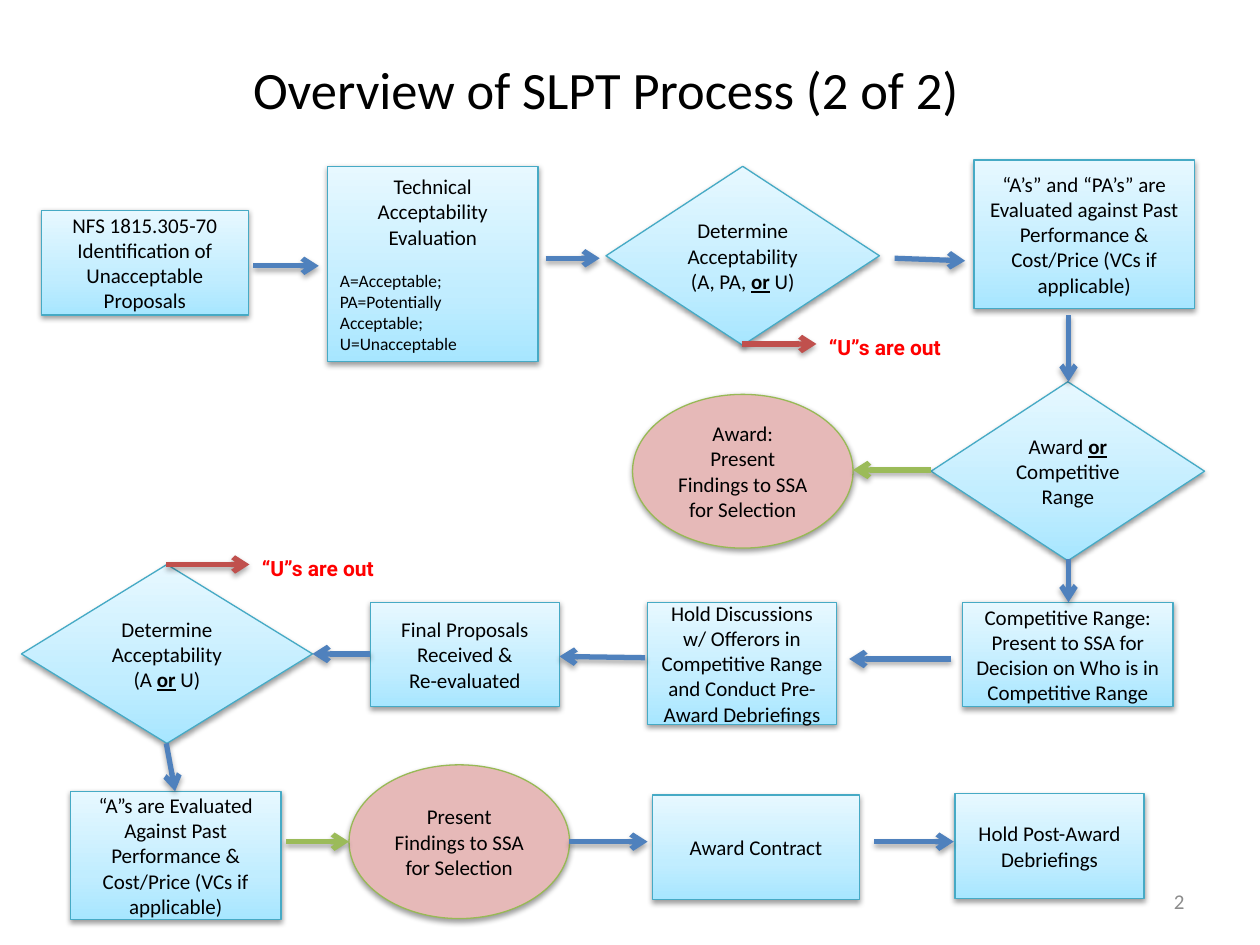
from lxml import etree
from pptx import Presentation
from pptx.dml.color import RGBColor
from pptx.enum.shapes import MSO_CONNECTOR, MSO_SHAPE
from pptx.enum.text import MSO_ANCHOR, PP_ALIGN
from pptx.oxml.ns import qn
from pptx.util import Inches, Pt

COLORS = {
    "text": "000000", "number": "8C8C8C", "out": "FF0000",
    "step_line": "46AAC5", "award": "E6B9B8", "award_line": "98B955",
    "next": "4F81BD", "reject": "C0504D", "select": "9BBB59",
}
STEP_STOPS = [(0, "A7E6FF"), (35, "C1EDFF"), (100, "E7F8FF")]


def rgb(name):
    return RGBColor.from_string(COLORS[name])


def write(p, text, size=12, font="Calibri", color="text", bold=False,
          align=PP_ALIGN.CENTER, before=0):
    p.alignment = align
    p.space_before = Pt(before)
    for i, part in enumerate(text.split("*")):
        r = p.add_run()
        r.text = part
        r.font.size = Pt(size)
        r.font.name = font
        r.font.color.rgb = rgb(color)
        r.font.bold = bold or i % 2 == 1
        r.font.underline = i % 2 == 1


class FlowSlide:
    def __init__(self, prs):
        self.slide = prs.slides.add_slide(prs.slide_layouts[5])
        self.shapes = self.slide.shapes

    def shadow(self, sp, dist, alpha):
        effects = etree.SubElement(sp._element.spPr, qn("a:effectLst"))
        outer = etree.SubElement(effects, qn("a:outerShdw"), blurRad="40000",
                                 dist=str(dist), dir="5400000", rotWithShape="0")
        clr = etree.SubElement(outer, qn("a:srgbClr"), val=COLORS["text"])
        etree.SubElement(clr, qn("a:alpha"), val=str(alpha * 1000))

    def title(self, text):
        sp = self.shapes.title
        sp.left, sp.top = Inches(0.14), Inches(0.33)
        sp.width, sp.height = Inches(9.34), Inches(0.75)
        sp.text_frame.vertical_anchor = MSO_ANCHOR.MIDDLE
        write(sp.text_frame.paragraphs[0], text, size=30)

    def node(self, kind, box, paras, line="step_line"):
        sp = self.shapes.add_shape(kind, *map(Inches, box))
        sp.line.color.rgb = rgb(line)
        sp.line.width = Pt(0.75)
        self.shadow(sp, 20000, 38)
        tf = sp.text_frame
        tf.word_wrap = True
        tf.vertical_anchor = MSO_ANCHOR.MIDDLE
        for i, text in enumerate(paras):
            p = tf.add_paragraph() if i else tf.paragraphs[0]
            write(p, text)
        return sp

    def step(self, box, *paras, kind=MSO_SHAPE.FLOWCHART_PROCESS):
        sp = self.node(kind, box, paras)
        sp.fill.gradient()
        sp.fill.gradient_angle = 90
        stops = sp._element.spPr.find(qn("a:gradFill")).find(qn("a:gsLst"))
        for gs in list(stops):
            stops.remove(gs)
        for pos, color in STEP_STOPS:
            gs = etree.SubElement(stops, qn("a:gs"), pos=str(pos * 1000))
            etree.SubElement(gs, qn("a:srgbClr"), val=color)
        return sp

    def decision(self, box, *paras):
        return self.step(box, *paras, kind=MSO_SHAPE.FLOWCHART_DECISION)

    def award(self, left, top, *paras):
        sp = self.node(MSO_SHAPE.OVAL, (left, top, 1.75, 1.22), paras, "award_line")
        sp.fill.solid()
        sp.fill.fore_color.rgb = rgb("award")

    def arrow(self, x1, y1, x2, y2, color="next"):
        cn = self.shapes.add_connector(MSO_CONNECTOR.STRAIGHT,
                                       *map(Inches, (x1, y1, x2, y2)))
        cn.line.color.rgb = rgb(color)
        cn.line.width = Pt(3)
        etree.SubElement(cn.line._get_or_add_ln(), qn("a:tailEnd"), type="arrow")
        self.shadow(cn, 23000, 35)

    def label(self, box, text, anchor=MSO_ANCHOR.TOP, **fmt):
        tf = self.shapes.add_textbox(*map(Inches, box)).text_frame
        tf.word_wrap = True
        tf.vertical_anchor = anchor
        write(tf.paragraphs[0], text, **fmt)

    def out_label(self, left, top):
        self.label((left, top, 1.25, 0.3), "“U”s are out", font="Roboto",
                   color="out", bold=True, align=PP_ALIGN.LEFT)


def main():
    prs = Presentation()
    prs.slide_width, prs.slide_height = Inches(10), Inches(7.5)
    s = FlowSlide(prs)
    s.title("Overview of SLPT Process (2 of 2)")

    s.step((0.33, 1.67, 1.64, 0.83), "NFS 1815.305-70",
           "Identification of Unacceptable Proposals")
    evaluation = s.step((2.6, 1.32, 1.67, 1.55), "Technical Acceptability Evaluation")
    write(evaluation.text_frame.add_paragraph(),
          "A=Acceptable; PA=Potentially Acceptable; U=Unacceptable",
          size=10, align=PP_ALIGN.LEFT, before=12)
    s.decision((4.81, 1.32, 2.17, 1.42), "Determine Acceptability (A, PA, *or* U)")
    s.step((7.73, 1.27, 1.75, 1.18),
           "“A’s” and “PA’s” are Evaluated against Past Performance & "
           "Cost/Price (VCs if applicable)")

    s.decision((7.39, 3.03, 2.17, 1.42), "Award *or* Competitive Range")
    s.award(5.02, 3.13, "Award:", "Present Findings to SSA for Selection")

    s.step((7.64, 4.78, 1.67, 0.83),
           "Competitive Range: Present to SSA for Decision on Who is in "
           "Competitive Range")
    s.step((5.14, 4.78, 1.5, 0.97),
           "Hold Discussions w/ Offerors in Competitive Range and Conduct "
           "Pre-Award Debriefings")
    s.step((2.94, 4.78, 1.5, 0.83), "Final Proposals Received &", "Re-evaluated")
    s.decision((0.17, 4.48, 2.31, 1.42), "Determine Acceptability", "(A *or* U)")

    s.step((0.56, 6.28, 1.67, 1.02),
           "“A”s are Evaluated Against Past Performance & Cost/Price "
           "(VCs if applicable)")
    s.award(2.77, 6.07, "Present Findings to SSA for Selection")
    s.step((5.18, 6.31, 1.64, 0.83), "Award Contract")
    s.step((7.58, 6.3, 1.5, 0.83), "Hold Post-Award Debriefings")

    for ends in [
        (2.01, 2.11, 2.53, 2.11), (4.33, 2.05, 4.76, 2.05),
        (7.1, 2.05, 7.66, 2.07), (8.48, 2.5, 8.48, 3.03),
        (8.48, 4.44, 8.48, 4.78), (7.55, 5.23, 6.74, 5.23),
        (5.12, 5.22, 4.44, 5.21), (2.94, 5.19, 2.48, 5.19),
        (1.32, 5.9, 1.39, 6.28), (4.52, 6.68, 5.14, 6.68),
        (6.94, 6.68, 7.57, 6.68),
    ]:
        s.arrow(*ends)
    s.arrow(7.39, 3.73, 6.77, 3.73, "select")
    s.arrow(2.27, 6.68, 2.77, 6.68, "select")
    s.arrow(5.89, 2.73, 6.48, 2.73, "reject")
    s.arrow(1.32, 4.48, 1.98, 4.48, "reject")
    s.out_label(6.48, 2.61)
    s.out_label(1.98, 4.36)
    s.label((7.17, 6.95, 2.33, 0.4), "2", anchor=MSO_ANCHOR.MIDDLE,
            color="number", align=PP_ALIGN.RIGHT)
    prs.save("out.pptx")


if __name__ == "__main__":
    main()
